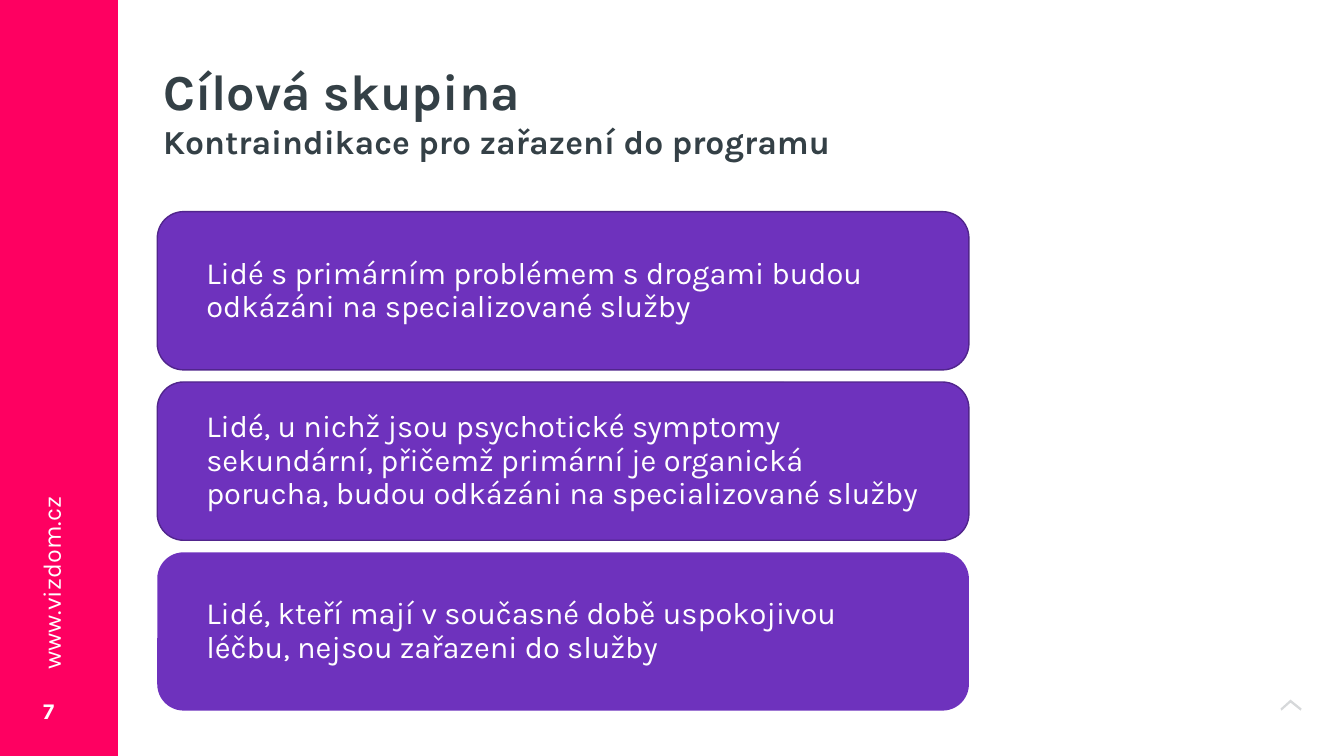
from lxml.etree import SubElement
from pptx import Presentation
from pptx.dml.color import RGBColor
from pptx.enum.shapes import MSO_SHAPE
from pptx.enum.text import MSO_ANCHOR, PP_ALIGN
from pptx.oxml.ns import qn

PX = 9144
WIDE, HIGH = 1333, 750
HUES = {"pink": "FE0061", "violet": "6E32BD", "edge": "51258C",
        "ink": "344046", "white": "FFFFFF"}
CARDS = [
    ("Lidé s primárním problémem s drogami budou odkázáni na specializované služby", "edge"),
    ("Lidé, u nichž jsou psychotické symptomy sekundární, přičemž primární je organická "
     "porucha, budou odkázáni na specializované služby", "edge"),
    ("Lidé, kteří mají v současné době uspokojivou léčbu, nejsou zařazeni do služby", None),
]


def px(*sizes):
    return [size * PX for size in sizes]


def color(name):
    return RGBColor.from_string(HUES[name])


def paint(shape, fill, line=None):
    shape.shadow.inherit = False
    shape.fill.solid()
    shape.fill.fore_color.rgb = color(fill)
    if line:
        shape.line.color.rgb = color(line)
        shape.line.width = 12700
    else:
        shape.line.fill.background()


def write(shape, *lines, hue="white", bold=False, anchor=MSO_ANCHOR.TOP,
          pads=(10, 5, 10, 5), space=1.0):
    frame = shape.text_frame
    frame.word_wrap = True
    frame.vertical_anchor = anchor
    (frame.margin_left, frame.margin_top,
     frame.margin_right, frame.margin_bottom) = px(*pads)
    for i, (text, size) in enumerate(lines):
        para = frame.add_paragraph() if i else frame.paragraphs[0]
        para.alignment = PP_ALIGN.LEFT
        para.line_spacing = space
        run = para.add_run()
        run.text = text
        font = run.font
        font.name = "Karla"
        font.size = size * 12700
        font.bold = bold
        font.color.rgb = color(hue)


def sidebar(slide, x, y, w, h):
    shapes = slide.shapes
    paint(shapes.add_shape(MSO_SHAPE.RECTANGLE, *px(x, y, w, h)), "pink")
    page = shapes.add_textbox(*px(x + 33, y + h - 75, 50, 60))
    write(page, ("7", 16), bold=True, anchor=MSO_ANCHOR.MIDDLE)
    site = shapes.add_textbox(*px(x - 68, y + h - 215, 238, 41))
    site.rotation = 270
    write(site, ("www.vizdom.cz", 18))


def heading(slide, x, y, w, h):
    box = slide.shapes.add_textbox(*px(x, y, w, h))
    write(box, ("Cílová skupina", 36),
          ("Kontraindikace pro zařazení do programu", 24), hue="ink", bold=True)


def stack(slide, x, y, w, h, gap=12):
    tall = (h - gap * (len(CARDS) - 1)) // len(CARDS)
    for i, (text, line) in enumerate(CARDS):
        top = y + i * (tall + gap)
        card = slide.shapes.add_shape(MSO_SHAPE.ROUNDED_RECTANGLE, *px(x, top, w, tall))
        paint(card, "violet", line)
        write(card, (text, 22), anchor=MSO_ANCHOR.MIDDLE, pads=(41, 0, 36, 0), space=0.9)


def chevron(slide, x, y, w, h):
    mid, thick = w // 2, 2
    pen = slide.shapes.build_freeform(*px(x + mid, y), scale=1.0)
    points = [(w, h - thick), (w - 1, h), (mid, thick + 1), (1, h), (0, h - thick)]
    pen.add_line_segments([px(x + a, y + b) for a, b in points], close=True)
    shape = pen.convert_to_shape()
    paint(shape, "ink")
    tint = shape.fill._xPr.find(qn("a:solidFill"))[0]
    SubElement(tint, qn("a:alpha")).set("val", "20000")


def main():
    deck = Presentation()
    deck.slide_width, deck.slide_height = px(WIDE, HIGH)
    slide = deck.slides.add_slide(deck.slide_layouts[6])
    chevron(slide, 1270, 694, 21, 11)
    sidebar(slide, 0, 0, 117, HIGH)
    heading(slide, 152, 55, 1067, 111)
    stack(slide, 156, 210, 805, 495)
    deck.save("out.pptx")


if __name__ == "__main__":
    main()
